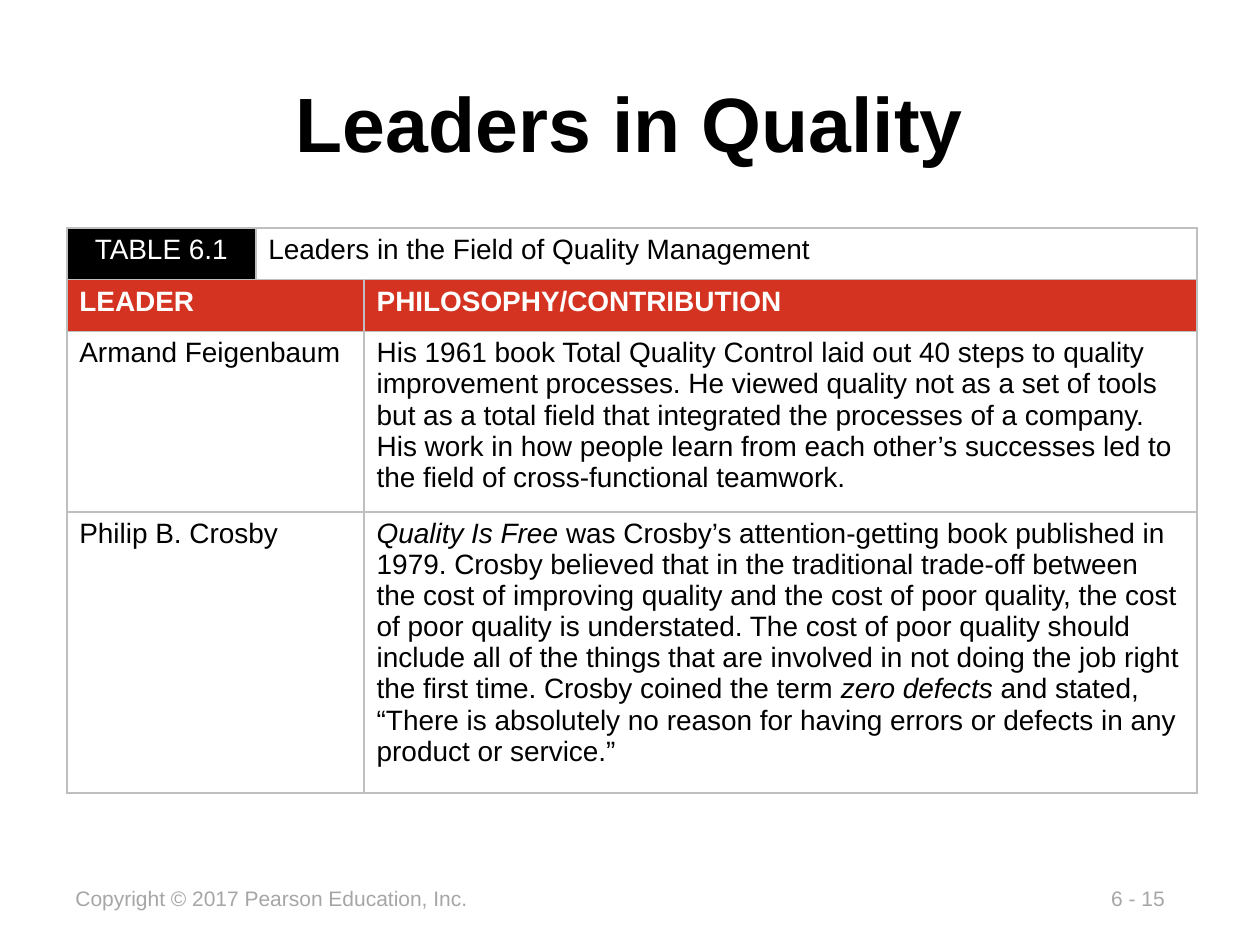
from lxml.etree import SubElement
from pptx import Presentation
from pptx.dml.color import RGBColor
from pptx.enum.text import MSO_ANCHOR as Anchor, PP_ALIGN as Align
from pptx.oxml.ns import qn
from pptx.util import Inches, Pt

BLACK = RGBColor(0x00, 0x00, 0x00)
WHITE = RGBColor(0xFF, 0xFF, 0xFF)
RED = RGBColor(0xD3, 0x33, 0x20)
FOOTER_GRAY = RGBColor(0xA6, 0xA6, 0xA6)
BORDER_GRAY = RGBColor(0xBF, 0xBF, 0xBF)

FONT = "Arial"
SLIDE_WIDTH, SLIDE_HEIGHT = Inches(10), Inches(7.5)
COLUMN_WIDTHS = (1.5, 0.86, 6.61)
ROW_HEIGHTS = (0.41, 0.41, 1.33, 2.08)

FEIGENBAUM = [
    ("His 1961 book Total Quality Control laid out 40 steps to quality improvement "
     "processes. He viewed quality not as a set of tools but as a total field that "
     "integrated the processes of a company. His work in how people learn from each "
     "other’s successes led to the field of cross-functional teamwork.", False),
]
CROSBY = [
    ("Quality Is Free ", True),
    ("was Crosby’s attention-getting book published in 1979. Crosby believed that in "
     "the traditional trade-off between the cost of improving quality and the cost of "
     "poor quality, the cost of poor quality is understated. The cost of poor quality "
     "should include all of the things that are involved in not doing the job right "
     "the first time. Crosby coined the term ", False),
    ("zero defects ", True),
    ("and stated, “There is absolutely no reason for having errors or defects in any "
     "product or service.”", False),
]


def format_paragraph(paragraph, size, color, bold=False, align=Align.LEFT):
    """Set the font and alignment of a whole paragraph."""
    paragraph.alignment = align
    font = paragraph.font
    font.name, font.size, font.bold = FONT, Pt(size), bold
    font.color.rgb = color


def add_title(slide, text):
    """Place and fill the title placeholder."""
    title = slide.shapes.title
    title.left, title.top = Inches(0.75), Inches(0.48)
    title.width, title.height = Inches(8.5), Inches(0.97)
    title.text_frame.text = text
    title.text_frame.vertical_anchor = Anchor.MIDDLE
    format_paragraph(title.text_frame.paragraphs[0], 44, BLACK, True, Align.CENTER)


def add_footer(slide, text, left, width):
    """Add one line of footer text."""
    box = slide.shapes.add_textbox(Inches(left), Inches(6.98), Inches(width), Inches(0.3))
    box.text_frame.text = text
    box.text_frame.word_wrap = False
    format_paragraph(box.text_frame.paragraphs[0], 12, FOOTER_GRAY)


def add_borders(cell):
    """Draw a thin line on all four sides of a cell."""
    properties = cell._tc.get_or_add_tcPr()
    for position, side in enumerate(("a:lnL", "a:lnR", "a:lnT", "a:lnB")):
        line = SubElement(properties, qn(side), w=str(Pt(1)))
        fill = SubElement(line, qn("a:solidFill"))
        SubElement(fill, qn("a:srgbClr"), val=str(BORDER_GRAY))
        properties.insert(position, line)


def fill_cell(cell, runs, color=BLACK, bold=False, align=Align.LEFT):
    """Write (text, italic) runs into a cell."""
    paragraph = cell.text_frame.paragraphs[0]
    for text, italic in runs:
        run = paragraph.add_run()
        run.text = text
        run.font.italic = italic
    format_paragraph(paragraph, 16, color, bold, align)


def add_leaders_table(slide):
    """Add the table with its caption row, header row and leaders."""
    frame = slide.shapes.add_table(
        len(ROW_HEIGHTS), len(COLUMN_WIDTHS), Inches(0.53), Inches(1.81),
        Inches(sum(COLUMN_WIDTHS)), Inches(sum(ROW_HEIGHTS)))
    table = frame.table
    table.first_row = table.horz_banding = False
    for column, width in zip(table.columns, COLUMN_WIDTHS):
        column.width = Inches(width)
    for row, height in zip(table.rows, ROW_HEIGHTS):
        row.height = Inches(height)

    for cell in table.iter_cells():
        cell.fill.background()
        add_borders(cell)
    table.cell(0, 1).merge(table.cell(0, 2))
    caption = table.cell(0, 0)
    caption.fill.solid()
    caption.fill.fore_color.rgb = BLACK
    fill_cell(caption, [("TABLE 6.1", False)], WHITE, align=Align.CENTER)
    fill_cell(table.cell(0, 1), [("Leaders in the Field of Quality Management", False)])

    entries = (
        ("LEADER", [("PHILOSOPHY/CONTRIBUTION", False)]),
        ("Armand Feigenbaum", FEIGENBAUM),
        ("Philip B. Crosby", CROSBY),
    )
    for row, (leader, contribution) in enumerate(entries, start=1):
        table.cell(row, 0).merge(table.cell(row, 1))
        is_header = row == 1
        color = WHITE if is_header else BLACK
        for column, runs in ((0, [(leader, False)]), (2, contribution)):
            cell = table.cell(row, column)
            if is_header:
                cell.fill.solid()
                cell.fill.fore_color.rgb = RED
            fill_cell(cell, runs, color, bold=is_header)


def main():
    """Build and save the slide."""
    presentation = Presentation()
    presentation.slide_width, presentation.slide_height = SLIDE_WIDTH, SLIDE_HEIGHT
    slide = presentation.slides.add_slide(presentation.slide_layouts[5])
    add_footer(slide, "6 - 15", 8.72, 0.65)
    add_footer(slide, "Copyright © 2017 Pearson Education, Inc.", 0.5, 3.35)
    add_title(slide, "Leaders in Quality")
    add_leaders_table(slide)
    presentation.save("out.pptx")


if __name__ == "__main__":
    main()
